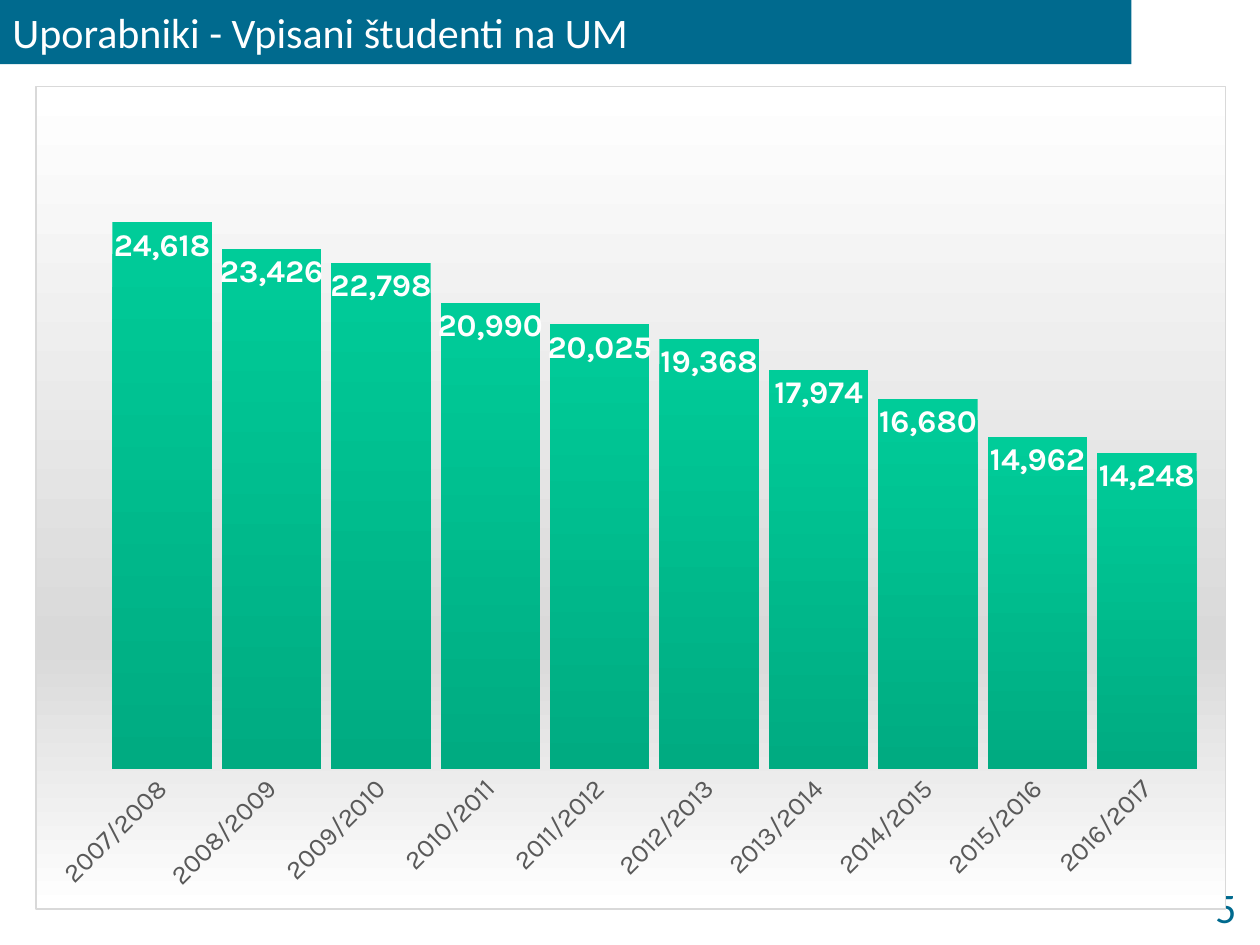
"""Build a slide with a column chart of enrolled students per academic year."""
from lxml import etree
from pptx import Presentation
from pptx.chart.data import CategoryChartData
from pptx.dml.color import RGBColor
from pptx.enum.chart import XL_CHART_TYPE, XL_LABEL_POSITION, XL_TICK_MARK
from pptx.enum.shapes import MSO_SHAPE
from pptx.enum.text import MSO_ANCHOR, PP_ALIGN
from pptx.oxml import parse_xml
from pptx.oxml.ns import nsdecls, qn
from pptx.util import Pt

COLUMNS = XL_CHART_TYPE.COLUMN_CLUSTERED
INSIDE_END = XL_LABEL_POSITION.INSIDE_END
NO_TICKS = XL_TICK_MARK.NONE
RECTANGLE = MSO_SHAPE.RECTANGLE
MIDDLE = MSO_ANCHOR.MIDDLE
LEFT, RIGHT = PP_ALIGN.LEFT, PP_ALIGN.RIGHT

TITLE = "Uporabniki - Vpisani študenti na UM"
PAGE_NUMBER = "5"
FIRST_YEAR = 2007
STUDENTS = [24618, 23426, 22798, 20990, 20025, 19368, 17974, 16680, 14962, 14248]
AXIS_MAXIMUM = 30000
NUMBER_FORMAT = "#,##0"

BLUE, WHITE, GREY = "006A8E", "FFFFFF", "D9D9D9"
BACKGROUND_STOPS = [(0, WHITE), (68, GREY), (100, WHITE)]
COLUMN_STOPS = [(0, "00CC99"), (100, "00AB81")]

TITLE_BOX = (0, 0, 646.5, 36.75)
NUMBER_BOX = (643, 502.5, 70.5, 31)
CHART_BOX = (20.2, 49, 680.4, 470.9)
PLOT_LAYOUT = {"x": 0.06, "y": 0.02, "w": 0.92, "h": 0.81}

HEADING_FONT = {"name": "Calibri", "size": Pt(24)}
CHART_FONT = {"name": "Karla", "size": Pt(10)}
AXIS_FONT = {"name": "Karla", "size": Pt(15), "bold": False}
LABEL_FONT = {"name": "Karla", "size": Pt(18), "bold": True}


def rgb(value):
    return RGBColor.from_string(value)


def points(box):
    return [Pt(length) for length in box]


def set_attributes(target, values):
    for name, value in values.items():
        setattr(target, name, value)


def style_font(font, values, color):
    set_attributes(font, values)
    font.color.rgb = rgb(color)


def write_text(shape, text, color, alignment):
    frame = shape.text_frame
    set_attributes(frame, {"word_wrap": True, "vertical_anchor": MIDDLE})
    paragraph = frame.paragraphs[0]
    paragraph.alignment = alignment
    run = paragraph.add_run()
    run.text = text
    style_font(run.font, HEADING_FONT, color)


def gradient(stops):
    stop_xml = "".join(
        f'<a:gs pos="{position * 1000}"><a:srgbClr val="{color}"/></a:gs>'
        for position, color in stops
    )
    return parse_xml(
        f'<a:gradFill {nsdecls("a")} rotWithShape="1"><a:gsLst>{stop_xml}</a:gsLst>'
        '<a:lin ang="5400000" scaled="0"/></a:gradFill>'
    )


def fill_chart_area(chart):
    properties = parse_xml(
        f'<c:spPr {nsdecls("c", "a")}><a:ln w="{Pt(0.75)}"><a:solidFill>'
        f'<a:srgbClr val="{GREY}"/></a:solidFill></a:ln></c:spPr>'
    )
    properties.insert(0, gradient(BACKGROUND_STOPS))
    chart.element.find(qn("c:chart")).addnext(properties)


def place_plot(chart):
    plot_area = chart.element.find(".//" + qn("c:plotArea"))
    for old_layout in plot_area.findall(qn("c:layout")):
        plot_area.remove(old_layout)
    layout = parse_xml(f'<c:layout {nsdecls("c")}><c:manualLayout/></c:layout>')
    settings = {"layoutTarget": "inner", "xMode": "edge", "yMode": "edge", **PLOT_LAYOUT}
    for name, value in settings.items():
        etree.SubElement(layout[0], qn(f"c:{name}")).set("val", str(value))
    plot_area.insert(0, layout)


def style_axes(chart):
    years = chart.category_axis
    set_attributes(years, {"major_tick_mark": NO_TICKS, "minor_tick_mark": NO_TICKS,
                           "has_major_gridlines": False})
    years.format.line.fill.background()
    style_font(years.tick_labels.font, AXIS_FONT, "595959")
    text_body = years._element.find(qn("c:txPr")).find(qn("a:bodyPr"))
    text_body.set("rot", "-2700000")
    set_attributes(chart.value_axis, {"minimum_scale": 0, "maximum_scale": AXIS_MAXIMUM,
                                      "has_major_gridlines": False, "visible": False})


def style_columns(plot):
    set_attributes(plot, {"gap_width": 10, "vary_by_categories": False,
                          "has_data_labels": True})
    labels = plot.data_labels
    set_attributes(labels, {"show_value": True, "position": INSIDE_END,
                            "number_format": NUMBER_FORMAT,
                            "number_format_is_linked": False})
    style_font(labels.font, LABEL_FONT, WHITE)
    series = plot.series[0]
    series.format.line.fill.background()
    series._element.find(qn("c:spPr")).insert(0, gradient(COLUMN_STOPS))


def add_student_chart(slide):
    data = CategoryChartData(number_format=NUMBER_FORMAT)
    last_year = FIRST_YEAR + len(STUDENTS)
    data.categories = [f"{year}/{year + 1}" for year in range(FIRST_YEAR, last_year)]
    data.add_series("Series 1", STUDENTS)
    chart = slide.shapes.add_chart(COLUMNS, *points(CHART_BOX), data).chart
    set_attributes(chart, {"has_legend": False, "has_title": False})
    style_font(chart.font, CHART_FONT, "000000")
    fill_chart_area(chart)
    place_plot(chart)
    style_axes(chart)
    style_columns(chart.plots[0])


def main():
    presentation = Presentation()
    set_attributes(presentation, {"slide_width": Pt(720), "slide_height": Pt(540)})
    slide = presentation.slides.add_slide(presentation.slide_layouts[6])

    page_number = slide.shapes.add_textbox(*points(NUMBER_BOX))
    write_text(page_number, PAGE_NUMBER, BLUE, RIGHT)

    title_bar = slide.shapes.add_shape(RECTANGLE, *points(TITLE_BOX))
    title_bar.shadow.inherit = False
    title_bar.fill.solid()
    title_bar.fill.fore_color.rgb = rgb(BLUE)
    title_bar.line.fill.background()
    write_text(title_bar, TITLE, WHITE, LEFT)

    add_student_chart(slide)
    presentation.save("out.pptx")


if __name__ == "__main__":
    main()
